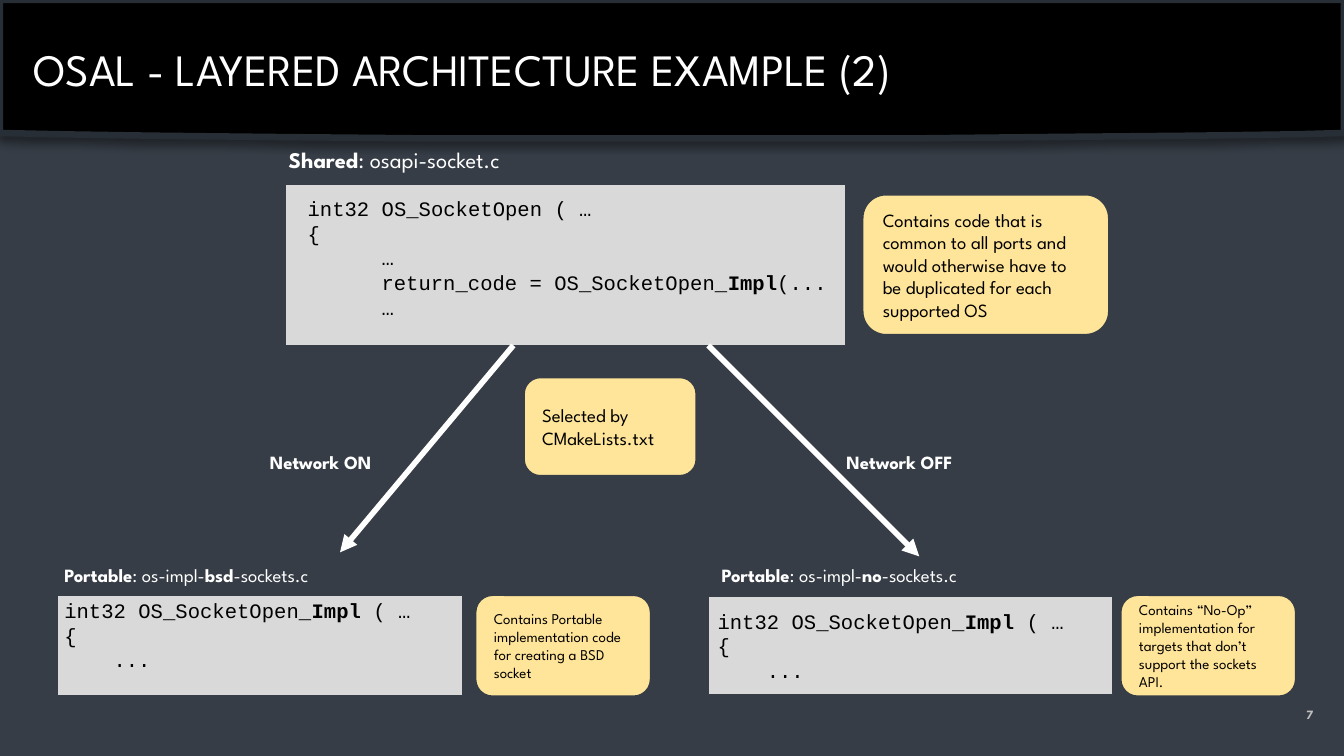
from lxml import etree
from pptx import Presentation
from pptx.dml.color import RGBColor
from pptx.enum.shapes import MSO_CONNECTOR, MSO_SHAPE
from pptx.enum.text import MSO_ANCHOR, MSO_AUTO_SIZE, PP_ALIGN
from pptx.oxml.ns import qn
from pptx.util import Inches, Pt

RECTANGLE = MSO_SHAPE.RECTANGLE
ROUNDED = MSO_SHAPE.ROUNDED_RECTANGLE
STRAIGHT = MSO_CONNECTOR.STRAIGHT
TOP, MIDDLE = MSO_ANCHOR.TOP, MSO_ANCHOR.MIDDLE
LEFT, RIGHT = PP_ALIGN.LEFT, PP_ALIGN.RIGHT
FIXED, GROW = MSO_AUTO_SIZE.NONE, MSO_AUTO_SIZE.SHAPE_TO_FIT_TEXT

COLORS = {
    "background": "363D46",
    "header": "000000",
    "header_edge": "282E35",
    "panel": "D9D9D9",
    "note": "FFE599",
    "light": "FFFFFF",
    "dark": "000000",
    "number": "BFBFBF",
}
SANS, MONO = "League Spartan", "Courier New"
CODE_SIZE = 11
CODE_CHARACTER = 0.6 * CODE_SIZE
HEADER_EDGE = [
    (10, 0), (10, 0.99), (9.64, 1), (8.89, 1.01), (7.81, 1.02), (6.81, 1.03),
    (3.16, 1.03), (2.04, 1.02), (1.13, 1.01), (0.45, 1), (0, 0.99),
]


def color(name):
    return RGBColor.from_string(COLORS[name])


def write_text(shape, paragraphs, *, size, ink="light", font=SANS, bold=False,
               align=LEFT, anchor=TOP, fit=FIXED):
    frame = shape.text_frame
    frame.word_wrap = True
    frame.auto_size = fit
    frame.vertical_anchor = anchor
    frame.margin_left = frame.margin_right = Inches(0.1)
    frame.margin_top = frame.margin_bottom = Inches(0.1)
    for index, (indent, text) in enumerate(paragraphs):
        paragraph = frame.paragraphs[0] if index == 0 else frame.add_paragraph()
        paragraph.alignment = align
        if indent:
            properties = paragraph._p.get_or_add_pPr()
            properties.set("marL", str(Pt(indent * CODE_CHARACTER)))
            properties.set("indent", "0")
        for position, part in enumerate(text.split("*")):
            if not part:
                continue
            run = paragraph.add_run()
            run.text = part
            run.font.name = font
            run.font.size = Pt(size)
            run.font.bold = bold or position % 2 == 1
            run.font.color.rgb = color(ink)


def add_text(slide, box, paragraphs, **text_format):
    shape = slide.shapes.add_textbox(*map(Inches, box))
    write_text(shape, paragraphs, **text_format)


def add_box(slide, kind, box, fill):
    shape = slide.shapes.add_shape(kind, *map(Inches, box))
    shape.shadow.inherit = False
    shape.fill.solid()
    shape.fill.fore_color.rgb = color(fill)
    shape.line.color.rgb = color("background")
    shape.line.width = Pt(0.75)
    return shape


def add_note(slide, box, text, size):
    note = add_box(slide, ROUNDED, box, "note")
    write_text(note, [(0, text)], size=size, ink="dark", anchor=MIDDLE)


def add_arrow(slide, start, end):
    arrow = slide.shapes.add_connector(STRAIGHT, *map(Inches, start + end))
    arrow.line.color.rgb = color("light")
    arrow.line.width = Pt(3)
    properties = arrow._element.spPr
    etree.SubElement(properties.find(qn("a:ln")), qn("a:tailEnd"), type="triangle")
    etree.SubElement(properties, qn("a:effectLst"))


def draw_header(slide, box, title):
    left, top, width, height = box
    builder = slide.shapes.build_freeform(Inches(left), Inches(top), scale=1.0)
    builder.add_line_segments(
        [(Inches(left + x), Inches(top + y)) for x, y in HEADER_EDGE], close=True)
    banner = builder.convert_to_shape()
    banner.fill.solid()
    banner.fill.fore_color.rgb = color("header")
    banner.line.color.rgb = color("header_edge")
    banner.line.width = Pt(3.5)
    banner.shadow.inherit = False
    effects = banner._element.spPr.find(qn("a:effectLst"))
    shadow = etree.SubElement(effects, qn("a:outerShdw"), blurRad=str(Pt(4)),
                              dist=str(Pt(3)), dir="5400000", rotWithShape="0")
    tint = etree.SubElement(shadow, qn("a:srgbClr"), val=COLORS["dark"])
    etree.SubElement(tint, qn("a:alpha"), val="40000")

    heading = slide.shapes.title
    heading.left, heading.top = Inches(left + 0.15), Inches(top + 0.21)
    heading.width, heading.height = Inches(width - 0.37), Inches(height - 0.4)
    write_text(heading, [(0, title)], size=24)
    slide.shapes._spTree.append(heading._element)


def draw_module(slide, box, heading, code, note, *, heading_box, code_box,
                note_box, heading_size=10, note_size=8):
    def place(part):
        return (box[0] + part[0], box[1] + part[1], *part[2:])

    add_box(slide, RECTANGLE, box, "panel")
    add_text(slide, place(heading_box), [(0, heading)], size=heading_size, fit=GROW)
    add_text(slide, place(code_box), code, size=CODE_SIZE, ink="dark", font=MONO,
             fit=GROW)
    add_note(slide, place(note_box), note, note_size)


def draw_selection(slide, box):
    left, top = box[:2]
    add_arrow(slide, (left + 3.36, top), (left + 4.93, top + 1.57))
    add_arrow(slide, (left + 1.91, top), (left + 0.62, top + 1.54))
    add_note(slide, (left + 1.99, top + 0.24, 1.28, 0.73),
             "Selected by CMakeLists.txt", 10)
    for offset, label in ((0, "Network ON"), (4.29, "Network OFF")):
        add_text(slide, (left + offset, top + 0.7, 1.16, 0.37), [(0, label)],
                 size=10, bold=True, fit=GROW)


def main():
    presentation = Presentation()
    presentation.slide_width = Inches(10)
    presentation.slide_height = Inches(10) * 9 // 16
    slide = presentation.slides.add_slide(presentation.slide_layouts[5])
    slide.background.fill.solid()
    slide.background.fill.fore_color.rgb = color("background")

    draw_header(slide, (0, 0, 10, 1.03), "OSAL - LAYERED ARCHITECTURE EXAMPLE (2)")
    add_text(slide, (9.27, 5.1, 0.6, 0.43), [(0, "7")], size=6.8, ink="number",
             bold=True, align=RIGHT, anchor=MIDDLE)

    draw_module(
        slide, (2.12, 1.37, 4.17, 1.2), "*Shared*: osapi-socket.c",
        [(0, "int32 OS_SocketOpen ( …"), (0, "{"), (6, "…"),
         (6, "return_code = OS_SocketOpen_*Impl*(..."), (6, "…")],
        "Contains code that is common to all ports and would otherwise have to be "
        "duplicated for each supported OS",
        heading_box=(-0.07, -0.38, 2.42, 0.4), code_box=(0.07, -0.01, 4.09, 1.13),
        note_box=(4.3, 0.08, 1.83, 1.04), heading_size=12, note_size=10)

    portable_code = [(0, "int32 OS_SocketOpen_*Impl* ( …"), (0, "{"), (4, "...")]
    draw_module(
        slide, (0.43, 4.43, 3.01, 0.75), "*Portable*: os-impl-*bsd*-sockets.c",
        portable_code,
        "Contains Portable implementation code for creating a BSD socket",
        heading_box=(-0.05, -0.32, 3.11, 0.37), code_box=(-0.05, -0.08, 3.01, 0.76),
        note_box=(3.11, 0, 1.3, 0.75))
    draw_module(
        slide, (5.27, 4.44, 3.01, 0.73), "*Portable*: os-impl-*no*-sockets.c",
        portable_code,
        "Contains “No-Op” implementation for targets that don’t support the "
        "sockets API.",
        heading_box=(0, -0.33, 3.11, 0.37), code_box=(-0.03, -0.01, 3.01, 0.76),
        note_box=(3.07, -0.01, 1.3, 0.75))

    draw_selection(slide, (1.91, 2.57, 5.45, 1.57))
    presentation.save("out.pptx")


if __name__ == "__main__":
    main()
